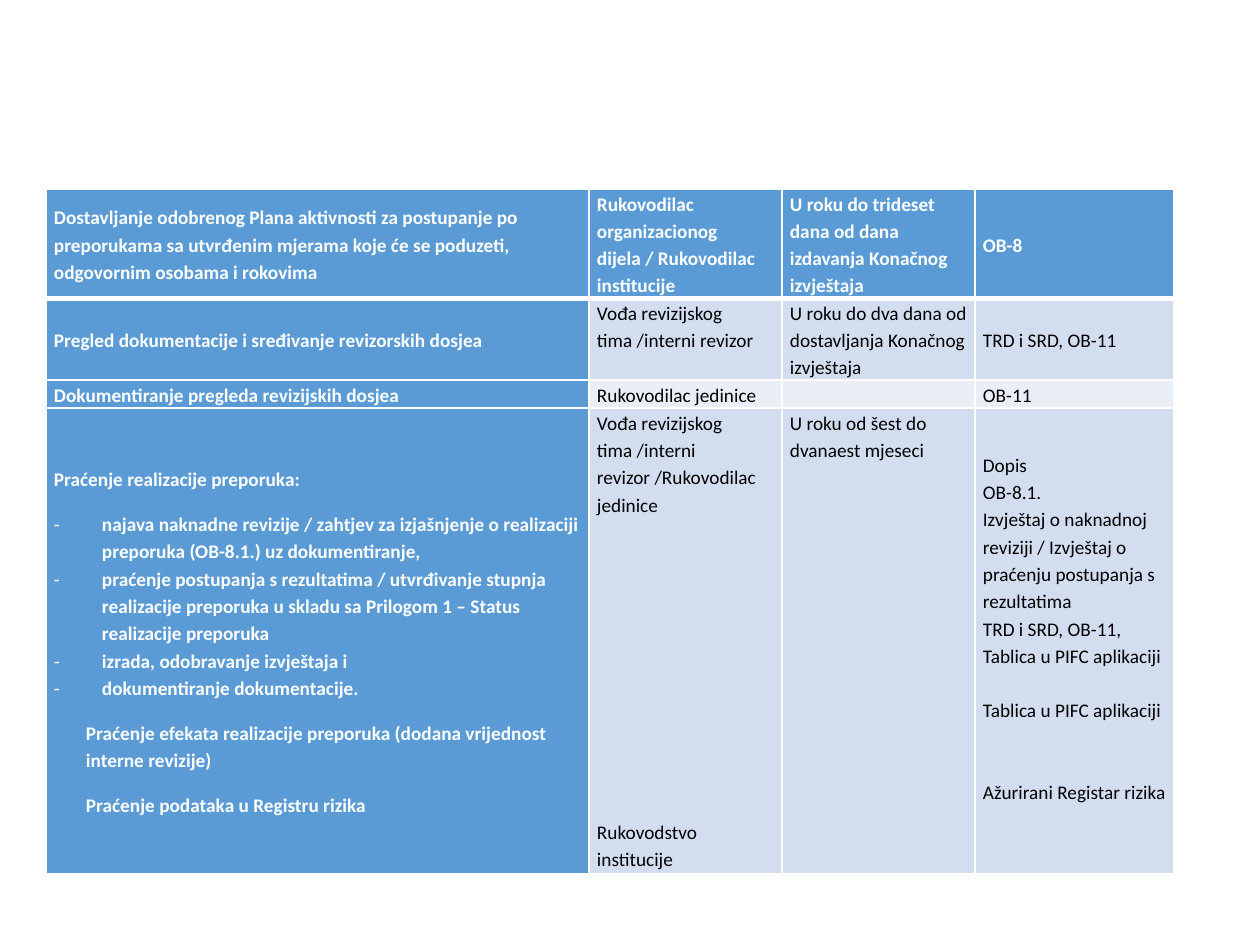
from lxml.etree import SubElement
from pptx import Presentation
from pptx.dml.color import RGBColor
from pptx.enum.text import MSO_ANCHOR
from pptx.oxml.ns import qn
from pptx.util import Emu, Pt

PX = 914400 / 126  # EMU in one px
COLORS = {"white": "FFFFFF", "black": "000000", "blue": "5B9BD5",
          "band": "D2DEEF", "light": "EAEFF7"}
FONT, SIZE, LINE_SPACING = "Calibri", 11, 1.15
LINE = 15.6  # height of one text line, points

# Content: each cell is a list of (text, options); gaps are in points
ROWS = [
    [[("Dostavljanje odobrenog Plana aktivnosti za postupanje po preporukama sa "
       "utvrđenim mjerama koje će se poduzeti, odgovornim osobama i rokovima", {})],
     [("Rukovodilac organizacionog dijela / Rukovodilac institucije", {})],
     [("U roku do trideset dana od dana izdavanja Konačnog izvještaja", {})],
     [("OB-8", {})]],
    [[("Pregled dokumentacije i sređivanje revizorskih dosjea", {})],
     [("Vođa revizijskog tima /interni revizor", {})],
     [("U roku do dva dana od dostavljanja Konačnog izvještaja", {})],
     [("TRD i SRD, OB-11", {})]],
    [[("Dokumentiranje pregleda revizijskih dosjea", {})],
     [("Rukovodilac jedinice", {})],
     [],
     [("OB-11", {})]],
    [[("Praćenje realizacije preporuka:", {"after": 10}),
      ("najava naknadne revizije / zahtjev za izjašnjenje o realizaciji preporuka "
       "(OB-8.1.) uz dokumentiranje,", {"bullet": "-"}),
      ("praćenje postupanja s rezultatima / utvrđivanje stupnja realizacije preporuka "
       "u skladu sa Prilogom 1 – Status realizacije preporuka", {"bullet": "-"}),
      ("izrada, odobravanje izvještaja i", {"bullet": "-"}),
      ("dokumentiranje dokumentacije.", {"bullet": "-", "after": 10}),
      ("Praćenje efekata realizacije preporuka (dodana vrijednost interne revizije)",
       {"indent": 32, "after": 10}),
      ("Praćenje podataka u Registru rizika", {"indent": 32})],
     [("Vođa revizijskog tima /interni revizor /Rukovodilac jedinice", {}),
      ("Rukovodstvo institucije", {"before": 11 * LINE})],
     [("U roku od šest do dvanaest mjeseci", {})],
     [("Dopis", {}),
      ("OB-8.1.", {}),
      ("Izvještaj o naknadnoj reviziji / Izvještaj o praćenju postupanja s rezultatima", {}),
      ("TRD i SRD, OB-11, Tablica u PIFC aplikaciji", {}),
      ("Tablica u PIFC aplikaciji", {"before": LINE}),
      ("Ažurirani Registar rizika", {"before": 2 * LINE})]],
]
ROW_FILLS = ["blue", "band", "light", "band"]
LEFT, TOP = 46, 189
COLUMN_WIDTHS = [543, 193, 193, 199]
ROW_HEIGHTS = [109, 82, 28, 466]
SIDE_MARGIN, BULLET_INDENT, LAST_CELL_BOTTOM = 8, 48, 27


def px(length):
    return Emu(round(length * PX))


def add_bullet(para, mark):
    props = para._p.get_or_add_pPr()
    props.set("marL", str(px(BULLET_INDENT)))
    props.set("indent", str(-px(BULLET_INDENT)))
    SubElement(props, qn("a:buFont")).set("typeface", FONT)
    SubElement(props, qn("a:buChar")).set("char", mark)


def format_para(para, text, options, color, bold):
    para.text = text
    if "bullet" in options:
        add_bullet(para, options["bullet"])
    elif "indent" in options:
        para._p.get_or_add_pPr().set("marL", str(px(options["indent"])))
    para.line_spacing = LINE_SPACING
    para.space_before = Pt(options.get("before", 0))
    para.space_after = Pt(options.get("after", 0))
    para.font.name, para.font.size, para.font.bold = FONT, Pt(SIZE), bold
    para.font.color.rgb = RGBColor.from_string(COLORS[color])


def add_borders(cell, widths):
    props = cell._tc.get_or_add_tcPr()
    for place, (side, width) in enumerate(widths.items()):
        line = props.makeelement(qn(f"a:{side}"), {"w": str(Pt(width))})
        fill = SubElement(line, qn("a:solidFill"))
        SubElement(fill, qn("a:srgbClr")).set("val", COLORS["white"])
        props.insert(place, line)


# Page and table
deck = Presentation()
deck.slide_width, deck.slide_height = px(1260), px(945)
page = deck.slides.add_slide(deck.slide_layouts[6])
table = page.shapes.add_table(
    len(ROWS), len(COLUMN_WIDTHS), px(LEFT), px(TOP),
    px(sum(COLUMN_WIDTHS)), px(sum(ROW_HEIGHTS))).table
table.first_col = True
for column, width in zip(table.columns, COLUMN_WIDTHS):
    column.width = px(width)
for row, height in zip(table.rows, ROW_HEIGHTS):
    row.height = px(height)

# Cells
for r, row in enumerate(ROWS):
    for c, paragraphs in enumerate(row):
        cell = table.cell(r, c)
        heading = r == 0 or c == 0
        cell.margin_left = cell.margin_right = px(SIDE_MARGIN)
        cell.margin_top = cell.margin_bottom = 0
        cell.vertical_anchor = MSO_ANCHOR.MIDDLE if c in (0, 3) else MSO_ANCHOR.TOP
        cell.fill.solid()
        cell.fill.fore_color.rgb = RGBColor.from_string(
            COLORS["blue" if heading else ROW_FILLS[r]])
        add_borders(cell, {"lnL": 1, "lnR": 1, "lnT": 3 if r == 1 else 1,
                           "lnB": 3 if r == 0 else 1})
        frame = cell.text_frame
        for i, (text, options) in enumerate(paragraphs or [("", {})]):
            para = frame.paragraphs[0] if i == 0 else frame.add_paragraph()
            format_para(para, text, options, "white" if heading else "black", heading)
        if not paragraphs:
            SubElement(para._p, qn("a:endParaRPr")).set("sz", str(SIZE * 100))

# Room below the last list
table.cell(len(ROWS) - 1, 3).margin_bottom = px(LAST_CELL_BOTTOM)

deck.save("out.pptx")
